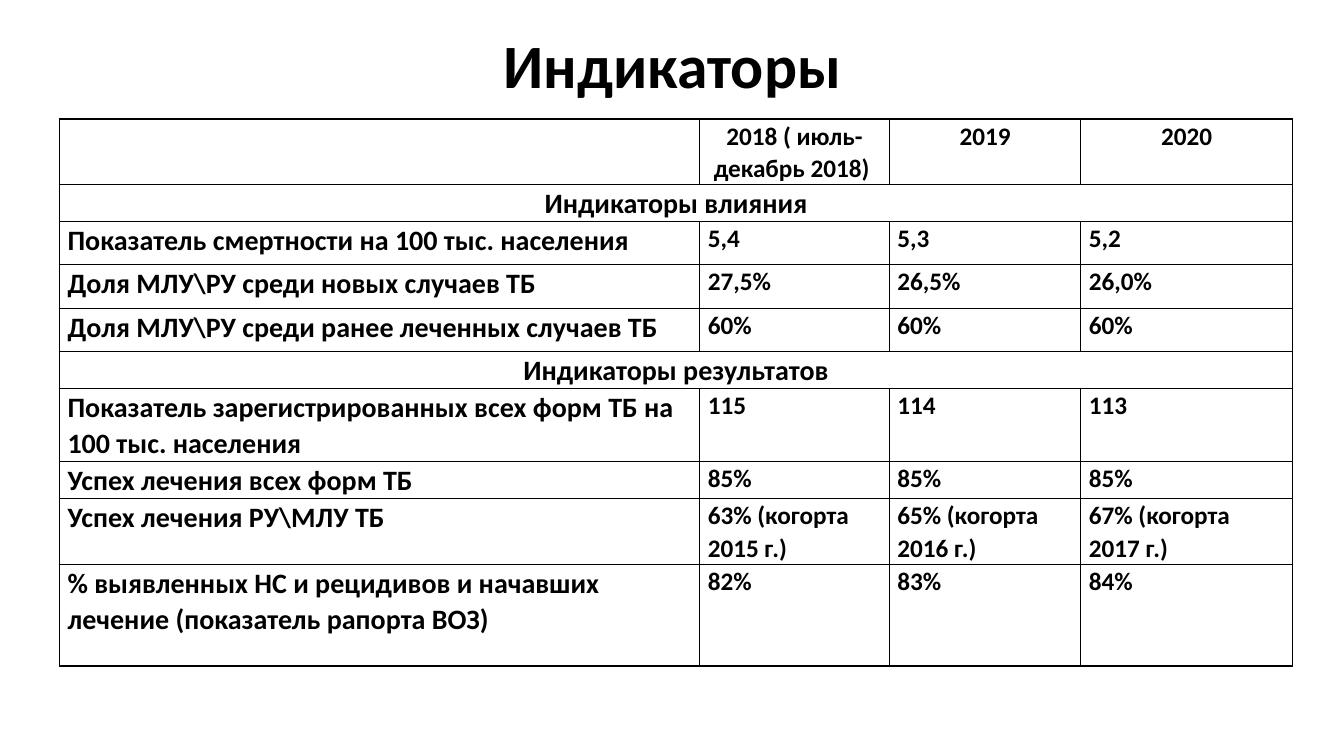
from lxml import etree
from pptx import Presentation
from pptx.dml.color import RGBColor
from pptx.enum.text import MSO_ANCHOR, PP_ALIGN
from pptx.oxml.ns import qn
from pptx.util import Inches, Pt

LEFT, CENTER = PP_ALIGN.LEFT, PP_ALIGN.CENTER
MIDDLE = MSO_ANCHOR.MIDDLE
BLACK = RGBColor(0x00, 0x00, 0x00)
WHITE = RGBColor(0xFF, 0xFF, 0xFF)

COLUMN_WIDTHS = [6.35, 1.88, 1.9, 2.1]
INDICATORS = [
    (0.6, ["", "2018 ( июль-декабрь 2018) ", "2019", "2020"]),
    (0.33, ["Индикаторы влияния"]),
    (0.43, ["Показатель смертности на 100 тыс. населения", "5,4", "5,3", "5,2"]),
    (0.43, [r"Доля МЛУ\РУ среди новых случаев ТБ", "27,5%", "26,5%", "26,0%"]),
    (0.43, [r"Доля МЛУ\РУ среди ранее леченных случаев ТБ", "60%", "60%", "60%"]),
    (0.33, ["Индикаторы результатов"]),
    (0.67, ["Показатель зарегистрированных всех форм ТБ на 100 тыс. населения",
            "115", "114", "113"]),
    (0.33, ["Успех лечения всех форм ТБ", "85%", "85%", "85%"]),
    (0.58, [r"Успех лечения РУ\MЛУ ТБ", "63% (когорта 2015 г.)",
            "65% (когорта 2016 г.)", "67% (когорта 2017 г.)"]),
    (1.01, ["% выявленных НС и рецидивов и начавших лечение (показатель рапорта ВОЗ)",
            "82%", "83%", "84%"]),
]


class IndicatorSlide:
    font = "Calibri"
    color = BLACK
    border_width = Pt(1)

    def __init__(self, presentation):
        self.slide = presentation.slides.add_slide(presentation.slide_layouts[5])
        self.slide.background.fill.solid()
        self.slide.background.fill.fore_color.rgb = WHITE

    def add_text(self, frame, text, size, align, spacing):
        paragraph = frame.paragraphs[0]
        paragraph.alignment = align
        paragraph.line_spacing = spacing
        paragraph.font.size = Pt(size)
        if not text:
            return
        run = paragraph.add_run()
        run.text = text
        run.font.name = self.font
        run.font.size = Pt(size)
        run.font.bold = True
        run.font.color.rgb = self.color

    def title(self, text, left, top, width, height):
        heading = self.slide.shapes.title
        heading.left, heading.top = Inches(left), Inches(top)
        heading.width, heading.height = Inches(width), Inches(height)
        heading.text_frame.vertical_anchor = MIDDLE
        heading.text_frame.word_wrap = True
        self.add_text(heading.text_frame, text, 44, CENTER, 0.9)

    def borders(self, cell):
        properties = cell._tc.get_or_add_tcPr()
        for side in ("a:lnL", "a:lnR", "a:lnT", "a:lnB"):
            line = etree.SubElement(properties, qn(side), w=str(self.border_width))
            fill = etree.SubElement(line, qn("a:solidFill"))
            etree.SubElement(fill, qn("a:srgbClr"), val=str(self.color))

    def cell(self, cell):
        cell.margin_left = cell.margin_right = Inches(0.08)
        cell.margin_top = cell.margin_bottom = 0
        self.borders(cell)
        cell.fill.background()

    def table(self, rows, widths, left, top):
        heights = [height for height, _ in rows]
        table = self.slide.shapes.add_table(
            len(rows), len(widths), Inches(left), Inches(top),
            Inches(sum(widths)), Inches(sum(heights))).table
        table.first_row = table.horz_banding = False
        for column, width in zip(table.columns, widths):
            column.width = Inches(width)
        for cell in table.iter_cells():
            self.cell(cell)
        for row, (height, texts) in enumerate(rows):
            table.rows[row].height = Inches(height)
            is_section = len(texts) == 1
            if is_section:
                table.cell(row, 0).merge(table.cell(row, len(widths) - 1))
            align = CENTER if is_section or row == 0 else LEFT
            for column, text in enumerate(texts):
                size = 20 if column == 0 and row > 0 else 18
                self.add_text(table.cell(row, column).text_frame, text, size, align, 1.07)


def main():
    presentation = Presentation()
    presentation.slide_width = Inches(13.33)
    presentation.slide_height = Inches(7.5)
    slide = IndicatorSlide(presentation)
    slide.title("Индикаторы", 2.14, 0.18, 9.06, 1.01)
    slide.table(INDICATORS, COLUMN_WIDTHS, 0.59, 1.18)
    presentation.save("out.pptx")


if __name__ == "__main__":
    main()
